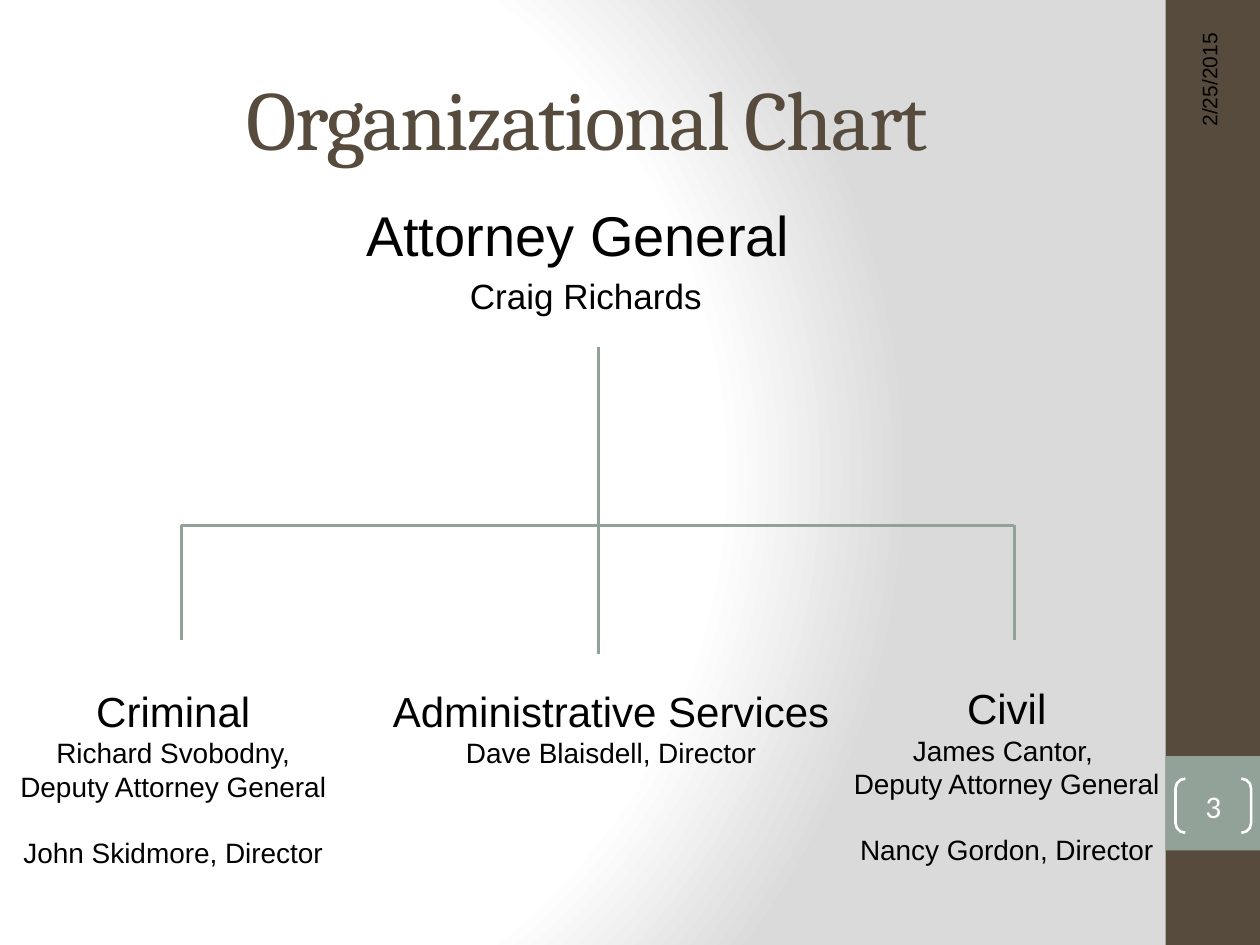
from dataclasses import dataclass
from typing import Optional

import pptx
import pptx.dml.color
import pptx.enum.shapes
import pptx.enum.text
import pptx.oxml
import pptx.oxml.ns
import pptx.util
from pptx.util import Inches

COLORS = {
    "brown": "564B3C",
    "sage": "93A299",
    "white": "FFFFFF",
    "gray": "DADADA",
    "black": "000000",
}
ALIGN = pptx.enum.text.PP_ALIGN
ANCHOR = pptx.enum.text.MSO_ANCHOR
SHAPE = pptx.enum.shapes.MSO_SHAPE


@dataclass
class Para:
    text: str
    size: float
    before: float = 0
    align: ALIGN = ALIGN.CENTER
    font: str = "Arial"
    color: str = "black"
    spacing: Optional[int] = None
    hanging: bool = False


@dataclass
class TextBox:
    left: float
    top: float
    width: float
    height: float
    paras: list[Para]
    anchor: ANCHOR = ANCHOR.TOP
    rotation: float = 0
    wrap: bool = True


@dataclass
class Line:
    x1: float
    y1: float
    x2: float
    y2: float


def rgb(name: str) -> pptx.dml.color.RGBColor:
    return pptx.dml.color.RGBColor.from_string(COLORS[name])


def set_attrs(obj, values: dict) -> None:
    for name, value in values.items():
        setattr(obj, name, value)


def write(tf, paras: list[Para]) -> None:
    for i, item in enumerate(paras):
        p = tf.add_paragraph() if i else tf.paragraphs[0]
        set_attrs(p, {"alignment": item.align, "space_before": pptx.util.Pt(item.before)})
        if item.hanging:
            pPr = p._p.get_or_add_pPr()
            pPr.set("marL", str(Inches(0.38)))
            pPr.set("indent", str(Inches(-0.25)))
        r = p.add_run()
        r.text = item.text
        set_attrs(r.font, {"name": item.font, "size": pptx.util.Pt(item.size)})
        r.font.color.rgb = rgb(item.color)
        if item.spacing is not None:
            r.font._element.set("spc", str(item.spacing))


def add_text(s, box: TextBox) -> None:
    sp = s.shapes.add_textbox(*map(Inches, (box.left, box.top, box.width, box.height)))
    sp.rotation = box.rotation
    set_attrs(sp.text_frame, {"word_wrap": box.wrap, "vertical_anchor": box.anchor})
    write(sp.text_frame, box.paras)


def add_block(s, top: float, height: float, color: str) -> None:
    sp = s.shapes.add_shape(SHAPE.RECTANGLE, *map(Inches, (9.25, top, 0.75, height)))
    sp.shadow.inherit = False
    sp.fill.solid()
    sp.fill.fore_color.rgb = rgb(color)
    sp.line.fill.background()


def add_line(s, line: Line) -> None:
    c = s.shapes.add_connector(
        pptx.enum.shapes.MSO_CONNECTOR.STRAIGHT,
        *map(Inches, (line.x1, line.y1, line.x2, line.y2)),
    )
    c.line.width = pptx.util.Pt(2)
    c.line.color.rgb = rgb("sage")
    c._element.spPr.append(pptx.oxml.parse_xml(f"<a:effectLst {pptx.oxml.ns.nsdecls('a')}/>"))


def add_page_number(s) -> None:
    sp = s.shapes.add_shape(SHAPE.DOUBLE_BRACKET, *map(Inches, (9.33, 6.18, 0.6, 0.43)))
    sp.shadow.inherit = False
    sp.adjustments[0] = 0.18
    sp.fill.background()
    sp.line.width = pptx.util.Pt(1.5)
    sp.line.color.rgb = rgb("white")
    margins = ("margin_left", "margin_top", "margin_right", "margin_bottom")
    set_attrs(sp.text_frame, dict.fromkeys(margins, 0))
    sp.text_frame.vertical_anchor = ANCHOR.MIDDLE
    write(sp.text_frame, [Para("3", 18, font="Calibri", color="white")])


def set_background(s) -> None:
    s.background.fill.gradient()
    grad = s.element.find(".//" + pptx.oxml.ns.qn("a:gradFill"))
    stops = "".join(
        f'<a:gs pos="{pos * 1000}"><a:srgbClr val="{COLORS[name]}"/></a:gs>'
        for pos, name in ((0, "white"), (75, "white"), (100, "gray"))
    )
    radial = pptx.oxml.parse_xml(
        f'<a:gradFill {pptx.oxml.ns.nsdecls("a")} rotWithShape="1"><a:gsLst>{stops}</a:gsLst>'
        '<a:path path="circle"><a:fillToRect l="20000" t="50000" r="100000" b="50000"/></a:path>'
        "</a:gradFill>"
    )
    grad.getparent().replace(grad, radial)


def division(name: str, *people: str, director: str) -> list[Para]:
    return [Para(name, 24), *(Para(t, 16) for t in people), Para(director, 16, before=18.4)]


LEFT, CENTER, RIGHT = 1.44, 4.75, 8.05
BAR = 4.17
LINES = [
    Line(LEFT, BAR, RIGHT, BAR),
    Line(LEFT, BAR, LEFT, 5.08),
    Line(CENTER, 2.75, CENTER, 5.19),
    Line(RIGHT, BAR, RIGHT, 5.08),
]
TEXTS = [
    TextBox(0.5, 0.3, 8.33, 1.25,
            [Para("Organizational Chart", 48, font="Cambria", color="brown", spacing=-100)],
            anchor=ANCHOR.MIDDLE),
    TextBox(0.42, 1.54, 8.33, 5.25,
            [Para("Attorney General ", 32, before=4, hanging=True),
             Para("Craig Richards", 20, before=4, hanging=True)]),
    TextBox(8.01, 1.55, 3.17, 0.4, [Para("2/25/2015", 12, align=ALIGN.RIGHT)],
            anchor=ANCHOR.MIDDLE, rotation=270),
    TextBox(6.6, 5.37, 2.78, 1.58,
            division("Civil", "James Cantor, ", "Deputy Attorney General",
                     director="Nancy Gordon, Director")),
    TextBox(-0.02, 5.39, 2.79, 1.58,
            division("Criminal", "Richard Svobodny, Deputy Attorney General",
                     director="John Skidmore, Director")),
    TextBox(3, 5.39, 3.7, 0.77,
            [Para("Administrative Services", 24), Para("Dave Blaisdell, Director", 16)],
            wrap=False),
]


def main() -> None:
    prs = pptx.Presentation()
    set_attrs(prs, {"slide_width": Inches(10), "slide_height": Inches(7.5)})
    s = prs.slides.add_slide(prs.slide_layouts[6])
    set_background(s)
    add_block(s, 0, 7.5, "brown")
    add_block(s, 6, 0.75, "sage")
    add_page_number(s)
    for line in LINES:
        add_line(s, line)
    for box in TEXTS:
        add_text(s, box)
    prs.save("out.pptx")


if __name__ == "__main__":
    main()
